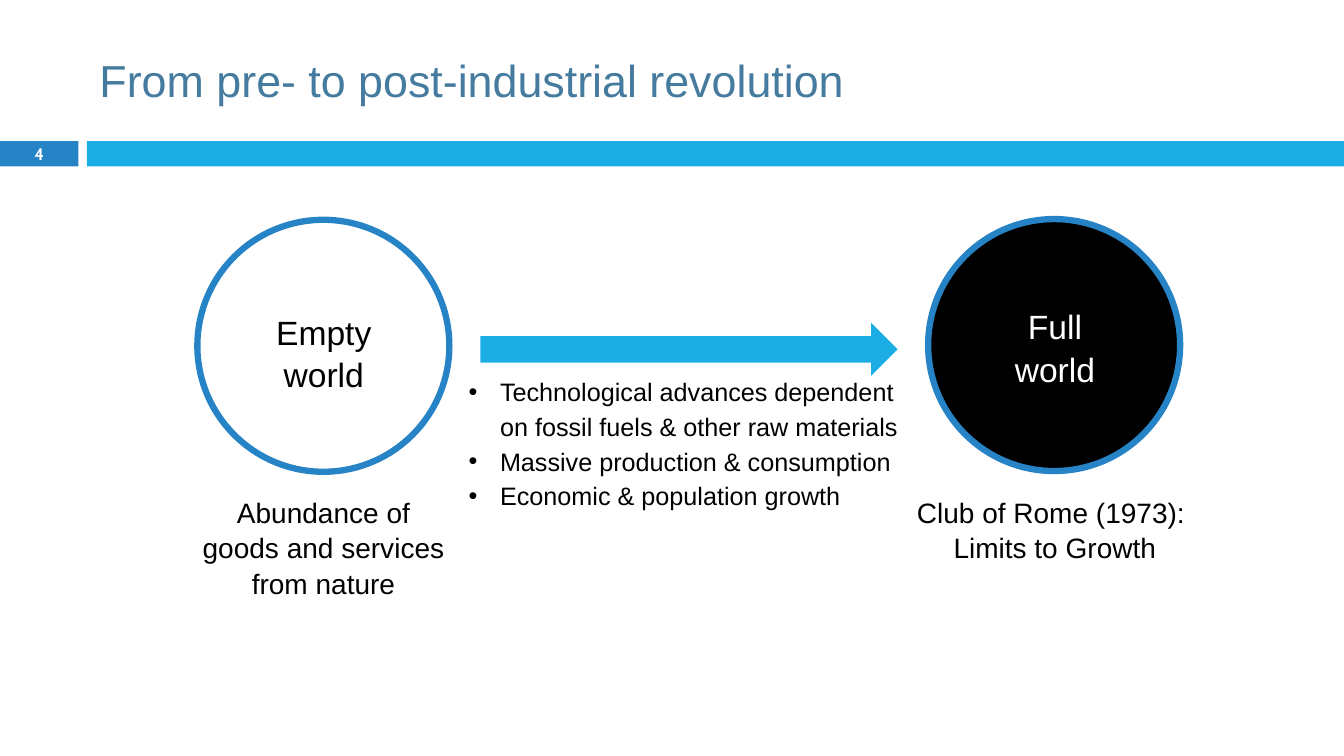
from lxml import etree
from pptx import Presentation
from pptx.dml.color import RGBColor
from pptx.enum.shapes import MSO_SHAPE
from pptx.enum.text import MSO_ANCHOR, PP_ALIGN
from pptx.oxml.ns import qn
from pptx.util import Pt

RECT = MSO_SHAPE.RECTANGLE
OVAL = MSO_SHAPE.OVAL
ARROW = MSO_SHAPE.RIGHT_ARROW
TOP, MID = MSO_ANCHOR.TOP, MSO_ANCHOR.MIDDLE
LEFT, MIDDLE = PP_ALIGN.LEFT, PP_ALIGN.CENTER

COLORS = {
    "title": "457B9E",
    "blue": "2683C6",
    "sky": "1CADE4",
    "black": "000000",
    "white": "FFFFFF",
}


def color(name):
    return RGBColor.from_string(COLORS[name])


class Page:
    """Holds the text style and the slide being built."""

    font = "Arial"
    indent = 22.5
    ring = 4.5

    def __init__(self, slide):
        self.slide = slide

    def shape(self, kind, box, fill=None, line=None):
        item = self.slide.shapes.add_shape(kind, *map(Pt, box))
        item.shadow.inherit = False
        if fill:
            item.fill.solid()
            item.fill.fore_color.rgb = color(fill)
        else:
            item.fill.background()
        if line:
            item.line.color.rgb = color(line)
            item.line.width = Pt(self.ring)
        else:
            item.line.fill.background()
        return item

    def text(self, box, lines, size, ink="black", align=MIDDLE, anchor=TOP,
             space=1.05, font=None, bold=False, bullet=False):
        frame = self.slide.shapes.add_textbox(*map(Pt, box)).text_frame
        frame.word_wrap = True
        frame.vertical_anchor = anchor
        for i, line in enumerate(lines):
            para = frame.add_paragraph() if i else frame.paragraphs[0]
            para.alignment = align
            para.line_spacing = space
            if bullet:
                self.bullet(para)
            run = para.add_run()
            run.text = line
            run.font.name = font or self.font
            run.font.size = Pt(size)
            run.font.bold = bold
            run.font.color.rgb = color(ink)

    def bullet(self, para):
        props = para._p.get_or_add_pPr()
        props.set("marL", str(Pt(self.indent)))
        props.set("indent", str(-Pt(self.indent)))
        etree.SubElement(props, qn("a:buFont")).set("typeface", self.font)
        etree.SubElement(props, qn("a:buChar")).set("char", "•")


def main():
    deck = Presentation()
    deck.slide_width, deck.slide_height = Pt(960), Pt(540)
    page = Page(deck.slides.add_slide(deck.slide_layouts[6]))

    page.shape(RECT, (0, 100.8, 56, 18), "blue")
    page.shape(RECT, (62, 100.8, 898, 18), "sky")
    page.text((64, 18, 856, 78), ["From pre- to post-industrial revolution"],
              32, "title", LEFT, MID, space=1)
    page.text((0, 100, 56, 19.5), ["4"], 11.9, "white", anchor=MID,
              space=1, font="Cabin", bold=True)

    page.shape(OVAL, (141, 157, 180, 180), line="blue")
    page.shape(OVAL, (663, 156.5, 180, 180), "black", "blue")
    page.shape(ARROW, (343.2, 230.5, 298, 38), "sky")

    page.text((183, 217.5, 96.5, 65.5), ["Empty", "world"], 24)
    page.text((711, 213.8, 85, 65.5), ["Full", "world"], 24, "white")
    page.text((136.8, 349.2, 188.6, 80),
              ["Abundance of goods and services from nature"], 20)
    page.text((327.6, 262, 330, 101.5), [
        "Technological advances dependent on fossil fuels & other raw materials",
        "Massive production & consumption",
        "Economic & population growth",
    ], 18, align=LEFT, space=1.15, bullet=True)
    page.text((646.5, 349.2, 214, 55.5),
              ["Club of Rome (1973): ", "Limits to Growth"], 20)

    deck.save("out.pptx")


if __name__ == "__main__":
    main()
